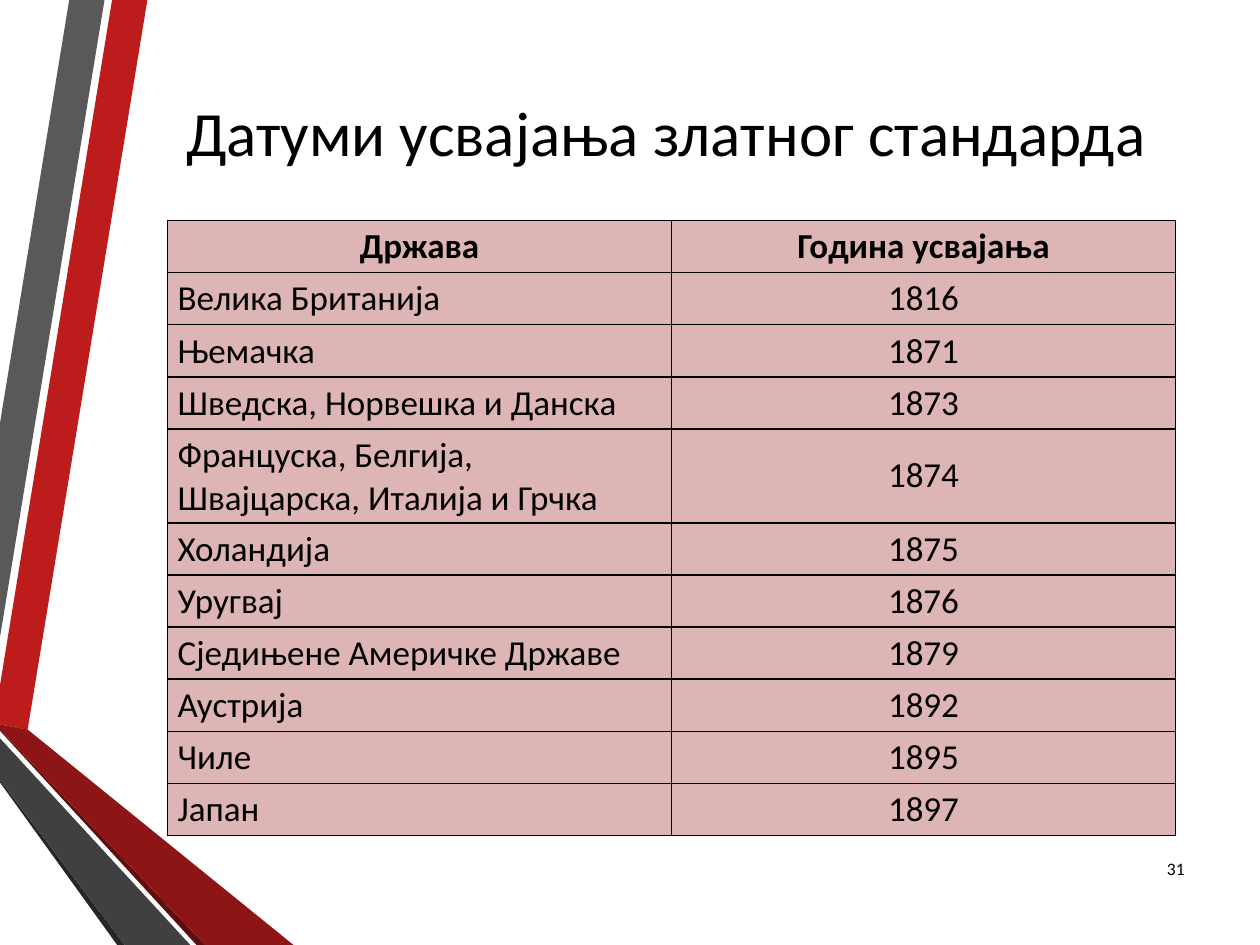
from dataclasses import dataclass

from lxml.etree import SubElement
from pptx import Presentation
from pptx.dml.color import RGBColor
from pptx.enum.text import MSO_ANCHOR as Anchor, PP_ALIGN as Align
from pptx.oxml.ns import qn
from pptx.util import Emu, Inches, Pt


@dataclass(frozen=True)
class Theme:
    font: str = "Calibri"
    ink: str = "000000"
    cell: str = "DEB5B5"
    red: str = "BC1C1C"
    dark_red: str = "8D1515"
    deep_red: str = "5E0E0E"
    gray: str = "595959"
    dark_gray: str = "404040"
    deep_gray: str = "262626"
    title_size: int = 36
    table_size: int = 20
    number_size: int = 10
    border_width: int = 1


@dataclass(frozen=True)
class Ribbon:
    color: str
    corners: tuple[tuple[float, float], ...]


@dataclass(frozen=True)
class Area:
    left: float
    top: float
    width: float
    height: float


@dataclass(frozen=True)
class Adoption:
    country: str
    year: str
    lines: int = 1


THEME = Theme()
PAGE_WIDTH, PAGE_HEIGHT = Inches(10), Inches(7.5)
GRID_COLUMNS, GRID_ROWS = 10, 7.5

TITLE_AREA = Area(1.07, 0.5, 8.43, 1.08)
NUMBER_AREA = Area(9.05, 6.69, 0.45, 0.4)
TABLE_AREA = Area(1.33, 1.75, 8, 4.86)
ROW_HEIGHTS = {1: 0.41, 2: 0.72}

RIBBONS = (
    Ribbon(THEME.red, ((0, 5.44), (0, 5.75), (0.22, 5.79), (1.17, 0), (0.89, 0))),
    Ribbon(THEME.gray, ((0.83, 0), (0.55, 0), (0, 3.36), (0, 5.06))),
    Ribbon(THEME.deep_gray, ((0, 6.19), (0, 6.21), (0.93, 7.5), (0.99, 7.5))),
    Ribbon(THEME.deep_red, ((0, 5.79), (0, 5.8), (1.56, 7.5), (1.63, 7.5))),
    Ribbon(THEME.dark_red, ((0, 5.79), (1.63, 7.5), (2.33, 7.5), (0.22, 5.79), (0, 5.75))),
    Ribbon(THEME.dark_gray, ((0, 6.19), (0.99, 7.5), (1.51, 7.5), (0, 5.86))),
)

HEADER = Adoption("Држава", "Година усвајања")
ADOPTIONS = (
    Adoption("Велика Британија", "1816"),
    Adoption("Њемачка", "1871"),
    Adoption("Шведска, Норвешка и Данска", "1873"),
    Adoption("Француска, Белгија, Швајцарска, Италија и Грчка", "1874", lines=2),
    Adoption("Холандија", "1875"),
    Adoption("Уругвај", "1876"),
    Adoption("Сједињене Америчке Државе", "1879"),
    Adoption("Аустрија", "1892"),
    Adoption("Чиле", "1895"),
    Adoption("Јапан", "1897"),
)


def across(columns: float) -> Emu:
    return Emu(round(PAGE_WIDTH * columns / GRID_COLUMNS))


def down(rows: float) -> Emu:
    return Emu(round(PAGE_HEIGHT * rows / GRID_ROWS))


def bounds(area: Area) -> tuple[Emu, Emu, Emu, Emu]:
    return across(area.left), down(area.top), across(area.width), down(area.height)


def write(frame, text: str, size: int, align: Align, bold: bool = False) -> None:
    frame.word_wrap = True
    frame.vertical_anchor = Anchor.MIDDLE
    para = frame.paragraphs[0]
    para.text = text
    para.alignment = align
    para.font.name = THEME.font
    para.font.size = Pt(size)
    para.font.bold = bold
    para.font.color.rgb = RGBColor.from_string(THEME.ink)


def draw_ribbon(page, ribbon: Ribbon) -> None:
    start, *rest = [(across(x), down(y)) for x, y in ribbon.corners]
    builder = page.shapes.build_freeform(*start)
    builder.add_line_segments(rest, close=True)
    shape = builder.convert_to_shape()
    shape.shadow.inherit = False
    shape.fill.solid()
    shape.fill.fore_color.rgb = RGBColor.from_string(ribbon.color)
    shape.line.fill.background()


def add_borders(cell) -> None:
    properties = cell._tc.get_or_add_tcPr()
    for position, side in enumerate(("a:lnL", "a:lnR", "a:lnT", "a:lnB")):
        line = properties.makeelement(qn(side), {"w": str(Pt(THEME.border_width))})
        properties.insert(position, line)
        fill = SubElement(line, qn("a:solidFill"))
        SubElement(fill, qn("a:srgbClr"), val=THEME.ink)


def fill_cell(cell, text: str, align: Align, bold: bool) -> None:
    cell.margin_left = cell.margin_right = Inches(0.08)
    cell.margin_top = cell.margin_bottom = Inches(0.04)
    write(cell.text_frame, text, THEME.table_size, align, bold)
    cell.vertical_anchor = Anchor.MIDDLE
    cell.fill.solid()
    cell.fill.fore_color.rgb = RGBColor.from_string(THEME.cell)
    add_borders(cell)


def draw_table(page, entries: tuple[Adoption, ...]) -> None:
    table = page.shapes.add_table(len(entries), 2, *bounds(TABLE_AREA)).table
    for index, entry in enumerate(entries):
        is_header = entry is HEADER
        table.rows[index].height = down(ROW_HEIGHTS[entry.lines])
        country_align = Align.CENTER if is_header else Align.LEFT
        fill_cell(table.cell(index, 0), entry.country, country_align, is_header)
        fill_cell(table.cell(index, 1), entry.year, Align.CENTER, is_header)


def main() -> None:
    deck = Presentation()
    deck.slide_width, deck.slide_height = PAGE_WIDTH, PAGE_HEIGHT
    page = deck.slides.add_slide(deck.slide_layouts.get_by_name("Title Only"))

    for ribbon in RIBBONS:
        draw_ribbon(page, ribbon)

    title = page.shapes.title
    title.left, title.top, title.width, title.height = bounds(TITLE_AREA)
    write(title.text_frame, "Датуми усвајања златног стандарда", THEME.title_size, Align.CENTER)

    number = page.shapes.add_textbox(*bounds(NUMBER_AREA))
    write(number.text_frame, "31", THEME.number_size, Align.RIGHT)

    draw_table(page, (HEADER, *ADOPTIONS))
    deck.save("out.pptx")


if __name__ == "__main__":
    main()
